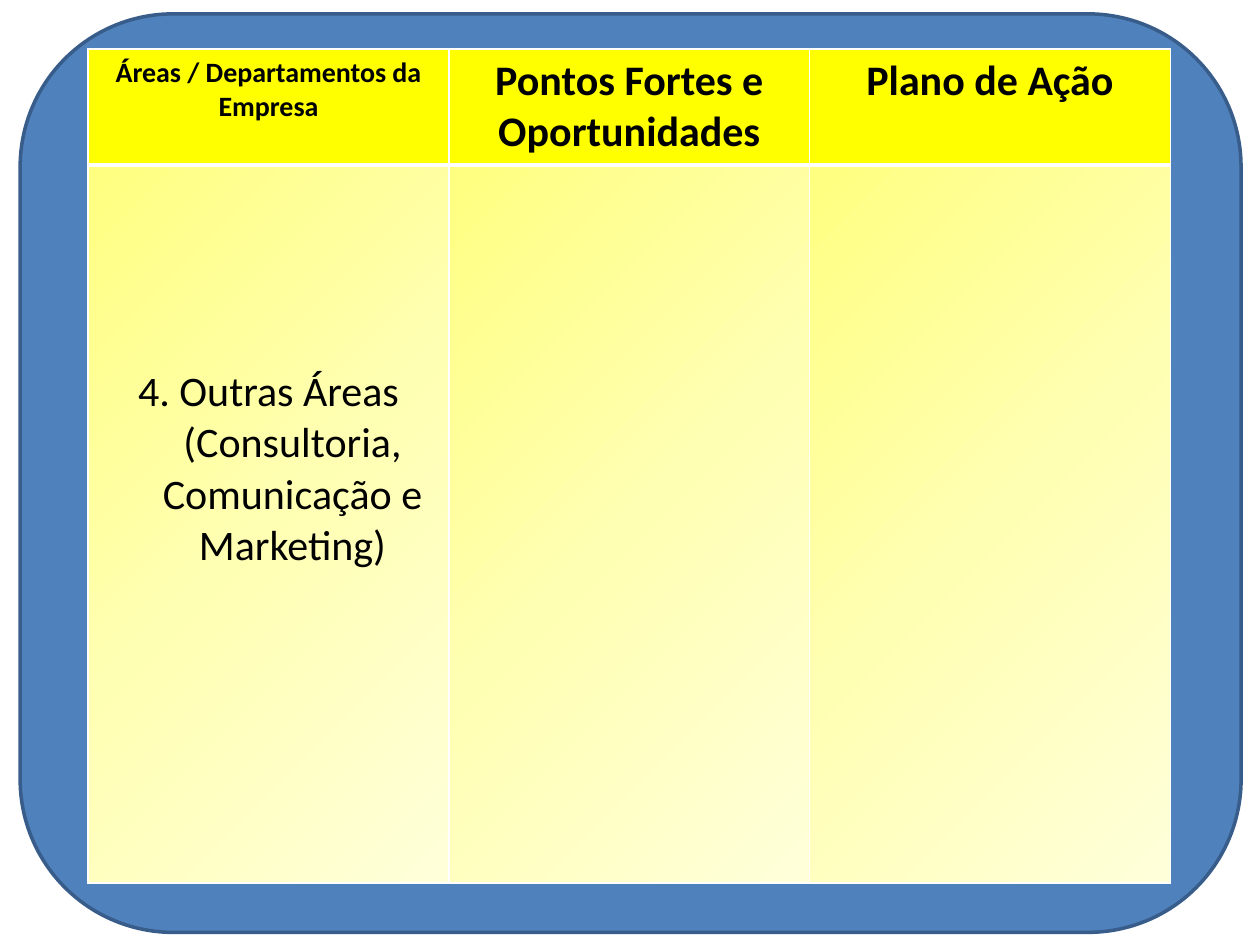
from dataclasses import dataclass

from lxml.etree import SubElement
from pptx import Presentation
from pptx.dml.color import RGBColor
from pptx.enum.shapes import MSO_SHAPE
from pptx.enum.text import PP_ALIGN
from pptx.oxml.ns import qn
from pptx.util import Inches, Pt


@dataclass(frozen=True)
class Theme:
    font: str = "Calibri"
    ink: str = "000000"
    panel: str = "4F81BD"
    edge: str = "385D8A"
    head: str = "FFFF00"
    rule: str = "FFFFFF"
    fade: tuple = ("FFFFDA", "FFFFB3", "FFFF80")
    small: int = 16
    large: int = 24


THEME = Theme()


def write(frame, text, size=THEME.large, bold=False, hang=0):
    """Fill a text frame, one centred paragraph per line of text."""
    for i, line in enumerate(text.split("\n")):
        para = frame.add_paragraph() if i else frame.paragraphs[0]
        para.alignment = PP_ALIGN.CENTER
        if hang:
            props = para._p.get_or_add_pPr()
            props.set("marL", str(Inches(hang)))
            props.set("indent", str(-Inches(hang)))
        run = para.add_run()
        run.text = line
        font = run.font
        font.name, font.size, font.bold = THEME.font, Pt(size), bold
        font.color.rgb = RGBColor.from_string(THEME.ink)


def add_panel(slide):
    panel = slide.shapes.add_shape(
        MSO_SHAPE.ROUNDED_RECTANGLE,
        Inches(0.16), Inches(0.11), Inches(9.69), Inches(7.29))
    panel.shadow.inherit = False
    panel.fill.solid()
    panel.fill.fore_color.rgb = RGBColor.from_string(THEME.panel)
    panel.line.color.rgb = RGBColor.from_string(THEME.edge)
    panel.line.width = Pt(2)


def set_rules(cell, top, bottom):
    """Draw the four cell borders, with widths in points."""
    props = cell._tc.get_or_add_tcPr()
    for side, width in (("L", 1), ("R", 1), ("T", top), ("B", bottom)):
        line = SubElement(props, qn(f"a:ln{side}"), w=str(Pt(width)))
        fill = SubElement(line, qn("a:solidFill"))
        SubElement(fill, qn("a:srgbClr"), val=THEME.rule)


def set_fade(cell):
    """Fill a cell with the diagonal gradient."""
    grad = SubElement(cell._tc.get_or_add_tcPr(), qn("a:gradFill"))
    stops = SubElement(grad, qn("a:gsLst"))
    for i, color in enumerate(THEME.fade):
        stop = SubElement(stops, qn("a:gs"), pos=str(i * 50000))
        SubElement(stop, qn("a:srgbClr"), val=color)
    SubElement(grad, qn("a:lin"), ang=str(225 * 60000), scaled="0")


def add_grid(slide):
    table = slide.shapes.add_table(
        2, 3, Inches(0.7), Inches(0.39), Inches(8.59), Inches(6.62)).table
    table.horz_banding = False
    for row, height in zip(table.rows, (0.92, 5.7)):
        row.height = Inches(height)
    for cell in table.iter_cells():
        cell.margin_left = cell.margin_right = Inches(0.05)
        cell.margin_top = cell.margin_bottom = Inches(0.05)

    # Header row
    heads = (("Áreas / Departamentos da Empresa", THEME.small),
             ("Pontos Fortes e\nOportunidades", THEME.large),
             ("Plano de Ação", THEME.large))
    for col, (text, size) in enumerate(heads):
        cell = table.cell(0, col)
        set_rules(cell, top=1, bottom=3)
        cell.fill.solid()
        cell.fill.fore_color.rgb = RGBColor.from_string(THEME.head)
        write(cell.text_frame, text, size=size, bold=True)

    # Body row
    for col in range(len(heads)):
        cell = table.cell(1, col)
        set_rules(cell, top=3, bottom=1)
        set_fade(cell)
    area = table.cell(1, 0)
    area.margin_top = Inches(1.6)
    write(area.text_frame,
          "4. Outras Áreas (Consultoria, Comunicação e Marketing)", hang=0.38)


def main():
    deck = Presentation()
    deck.slide_width, deck.slide_height = Inches(10), Inches(7.5)
    slide = deck.slides.add_slide(deck.slide_layouts[6])
    add_panel(slide)
    add_grid(slide)
    deck.save("out.pptx")


if __name__ == "__main__":
    main()
